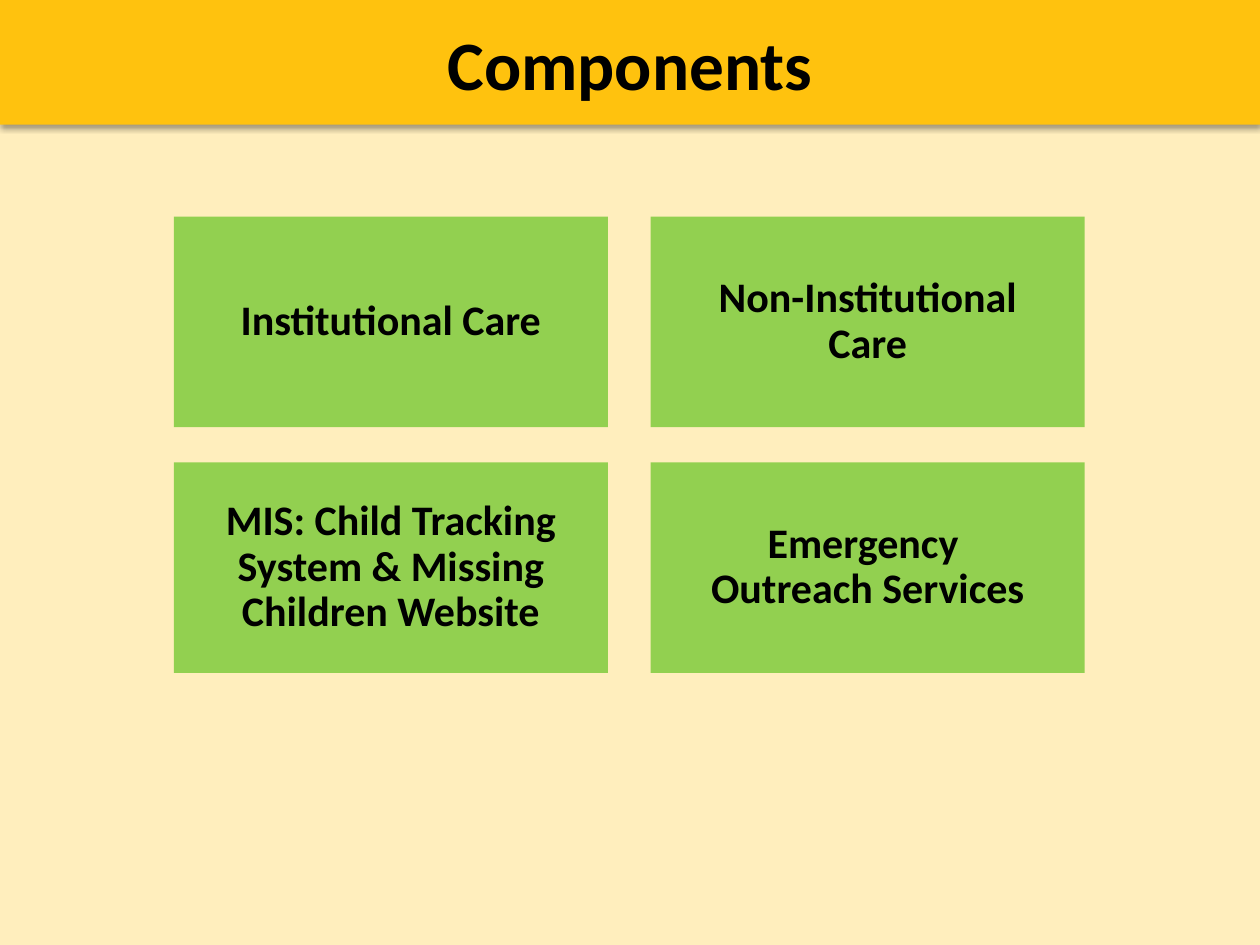
from lxml.etree import SubElement
from pptx import Presentation
from pptx.dml.color import RGBColor
from pptx.enum.shapes import MSO_SHAPE as Preset
from pptx.enum.text import MSO_ANCHOR as Anchor, PP_ALIGN as Align
from pptx.oxml.ns import qn
from pptx.util import Inches, Pt

COLORS = {"page": "FFEEBD", "header": "FFC20E", "card": "92D050",
          "text": "000000", "shadow": "000000"}
FONT = "Calibri"
WIDTH, HEIGHT = 10, 7.5
COMPONENTS = [
    ["Institutional Care"],
    ["Non-Institutional Care"],
    ["MIS: Child Tracking System & Missing Children Website"],
    ["Emergency ", "Outreach Services"],
]


def color(name):
    return RGBColor.from_string(COLORS[name])


def add_block(slide, box, fill):
    """Add a plain filled rectangle without line or shadow."""
    block = slide.shapes.add_shape(Preset.RECTANGLE, *map(Inches, box))
    block.shadow.inherit = False
    block.fill.solid()
    block.fill.fore_color.rgb = color(fill)
    block.line.fill.background()
    return block


def write(frame, lines, size, inset, anchor):
    """Write centred bold lines into one paragraph."""
    frame.word_wrap = True
    frame.vertical_anchor = anchor
    frame.margin_left = frame.margin_right = Inches(inset)
    frame.margin_top = frame.margin_bottom = Inches(inset)
    paragraph = frame.paragraphs[0]
    paragraph.alignment = Align.CENTER
    for number, line in enumerate(lines):
        if number:
            paragraph.add_line_break()
        run = paragraph.add_run()
        run.text = line
        run.font.name, run.font.size, run.font.bold = FONT, Pt(size), True
        run.font.color.rgb = color("text")
    return paragraph


def cast_shadow(block):
    effects = block._element.spPr.find(qn("a:effectLst"))
    shadow = SubElement(effects, qn("a:outerShdw"), blurRad=str(Pt(3.1)),
                        dist=str(Pt(1.8)), dir="5400000", rotWithShape="0")
    tint = SubElement(shadow, qn("a:srgbClr"), val=COLORS["shadow"])
    SubElement(tint, qn("a:alpha"), val="35000")


def add_header(slide, box, title):
    left, top, width, height = box
    cast_shadow(add_block(slide, box, "header"))
    title_box = slide.shapes.add_textbox(
        *map(Inches, (left, top + 0.09 * height, width, 0.73 * height)))
    write(title_box.text_frame, [title], 39.6, 0.08, Anchor.TOP)


def add_cards(slide, box, cards, columns=2, gap=(0.34, 0.28)):
    """Fill the box with equal cards, row by row."""
    left, top, width, height = box
    rows = -(-len(cards) // columns)
    card_width = (width - gap[0] * (columns - 1)) / columns
    card_height = (height - gap[1] * (rows - 1)) / rows
    for index, lines in enumerate(cards):
        row, column = divmod(index, columns)
        card = add_block(slide, (left + column * (card_width + gap[0]),
                                 top + row * (card_height + gap[1]),
                                 card_width, card_height), "card")
        write(card.text_frame, lines, 24, 0.25, Anchor.MIDDLE).line_spacing = 0.9


def main():
    deck = Presentation()
    deck.slide_width, deck.slide_height = Inches(WIDTH), Inches(HEIGHT)
    slide = deck.slides.add_slide(deck.slide_layouts[6])
    slide.background.fill.solid()
    slide.background.fill.fore_color.rgb = color("page")
    add_header(slide, (0, 0, WIDTH, 0.132 * HEIGHT), "Components")
    add_cards(slide, (1.38, 1.72, 7.23, 3.62), COMPONENTS)
    deck.save("out.pptx")


if __name__ == "__main__":
    main()
